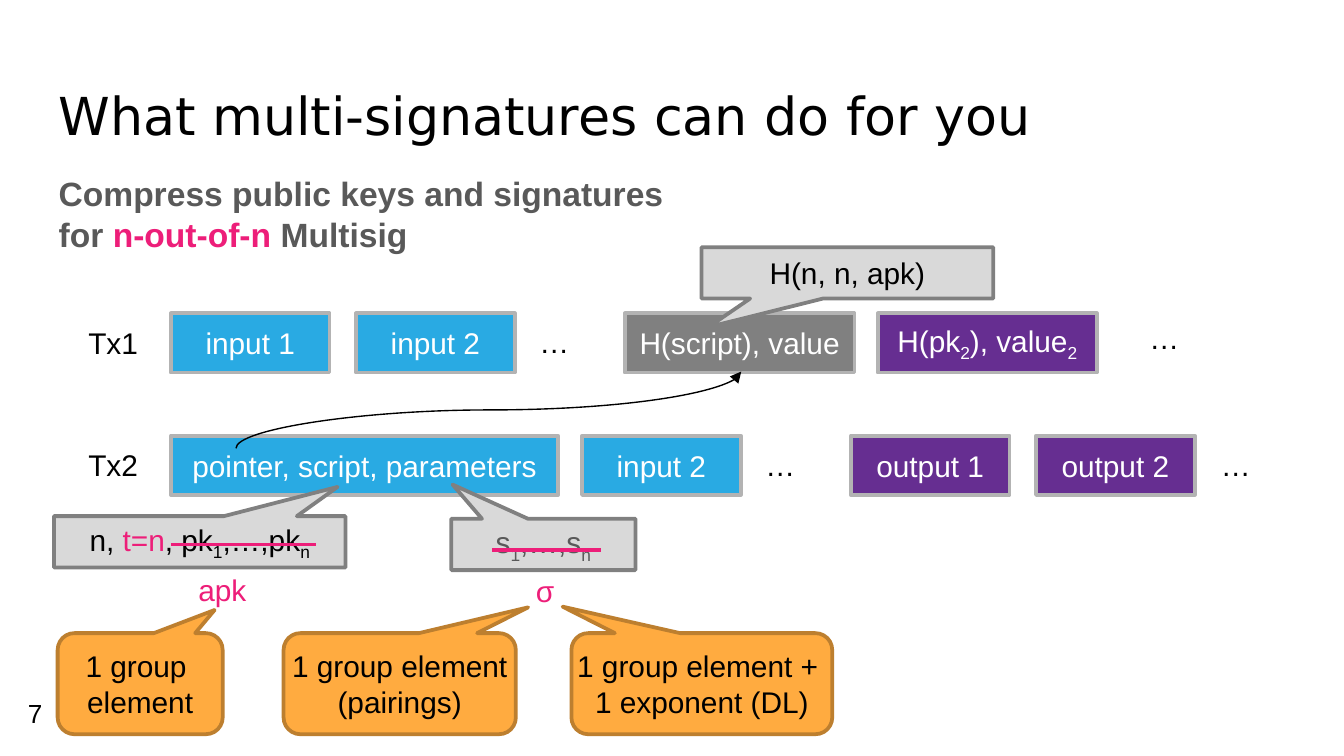
from lxml.etree import SubElement
from pptx import Presentation
from pptx.dml.color import RGBColor
from pptx.enum.shapes import MSO_CONNECTOR, MSO_SHAPE
from pptx.enum.text import MSO_ANCHOR, PP_ALIGN
from pptx.oxml.ns import qn
from pptx.util import Cm, Pt

BLACK, WHITE, DARK, PINK = "000000", "FFFFFF", "595959", "ED1E79"
BLUE, GREY, PURPLE = "29AAE3", "808080", "662E91"
BOX_H, SMALL_W, LABEL_W, LABEL_H = 1.12, 3.0, 1.55, 0.94

# Text is a list of runs: "_x" is a subscript, "\n" a line break,
# and a (text, colour) pair overrides the colour of the paragraph.
TRANSACTIONS = [  # name, top, boxes (left, width, fill, runs), ellipses (left, top)
    ("Tx1", 5.92,
     [(3.23, SMALL_W, BLUE, ["input 1"]),
      (6.73, SMALL_W, BLUE, ["input 2"]),
      (11.81, 4.34, GREY, ["H(script), value"]),
      (16.59, 4.14, PURPLE, ["H(pk", "_2", "), value", "_2"])],
     [(9.7, 5.99), (21.23, 5.92)]),
    ("Tx2", 8.23,
     [(3.23, 7.32, BLUE, ["pointer, script, parameters"]),
      (11.0, SMALL_W, BLUE, ["input 2"]),
      (16.08, SMALL_W, PURPLE, ["output 1"]),
      (19.58, SMALL_W, PURPLE, ["output 2"])],
     [(13.97, 8.31), (22.58, 8.31)]),
]
SCRIPT_CALLOUTS = [  # left, top, width, pointer tip, text colour, runs
    (13.26, 4.67, 5.51, (-0.476, 1.055), BLACK, ["H(n, n, apk)"]),
    (1.02, 9.75, 5.51, (0.473, -1.07), BLACK,
     ["n, ", ("t=n", PINK), ", pk", "_1", ",…,pk", "_n"]),
    (8.53, 9.8, 3.48, (-0.493, -1.166), DARK, ["s", "_1", ",…,s", "_n"]),
]
SIZE_CALLOUTS = [  # left, width, pointer tip, runs
    (1.09, 3.12, (0.451, -0.729), ["1 group ", "\n", "element"]),
    (5.36, 4.39, (0.553, -0.755), ["1 group element (pairings)"]),
    (10.8, 4.93, (-0.534, -0.762), ["1 group element + ", "\n", "1 exponent (DL)"]),
]
STRIKES = [(3.23, 5.97, 10.29), (9.3, 11.35, 10.39)]  # left, right, y
REPLACEMENTS = [(3.5, 10.67, 1.42, "apk"), (9.88, 10.69, 0.86, "σ")]

prs = Presentation()
prs.slide_width, prs.slide_height = Cm(25.4), Cm(14.28)
slide = prs.slides.add_slide(prs.slide_layouts[6])


def rgb(color):
    return RGBColor.from_string(color)


def write(s, runs, color, size=16, align=PP_ALIGN.CENTER, font="Arial", bold=False):
    tf = s.text_frame
    p = tf.paragraphs[0]
    p.alignment = align
    p.font.name, p.font.size, p.font.bold = font, Pt(size), bold
    p.font.color.rgb = rgb(color)
    for run in runs:
        if run == "\n":
            p.add_line_break()
            continue
        text, run_color = run if isinstance(run, tuple) else (run, None)
        r = p.add_run()
        r.text = text.lstrip("_")
        if run_color:
            r.font.color.rgb = rgb(run_color)
        if text.startswith("_"):
            r._r.get_or_add_rPr().set("baseline", "-25000")
    return tf


def text_box(left, top, width, height, runs, color=BLACK, wrap=True,
             align=PP_ALIGN.LEFT, **style):
    s = slide.shapes.add_textbox(Cm(left), Cm(top), Cm(width), Cm(height))
    s.text_frame.word_wrap = wrap
    return write(s, runs, color, align=align, **style)


def box(kind, left, top, width, height, fill, line, runs, color, tip=()):
    s = slide.shapes.add_shape(kind, Cm(left), Cm(top), Cm(width), Cm(height))
    s.shadow.inherit = False
    s.fill.solid()
    s.fill.fore_color.rgb = rgb(fill)
    s.line.color.rgb = rgb(line)
    s.line.width = Pt(2)
    for i, value in enumerate(tip):
        s.adjustments[i] = value
    tf = write(s, runs, color)
    tf.word_wrap, tf.vertical_anchor = True, MSO_ANCHOR.MIDDLE
    return tf


def connect(kind, x1, y1, x2, y2, color, width):
    c = slide.shapes.add_connector(kind, Cm(x1), Cm(y1), Cm(x2), Cm(y2))
    c.line.color.rgb = rgb(color)
    c.line.width = Pt(width)
    SubElement(c._element.spPr, qn("a:effectLst"))
    return c


title = text_box(0.86, 1.24, 23.67, 1.6, ["What multi-signatures can do for you"],
                 size=28, font="DejaVu Sans")
title.margin_top = Cm(0.33)
text_box(0.86, 3.15, 11.99, 1.8,
         ["Compress public keys and signatures for ", ("n-out-of-n ", PINK), "Multisig"],
         DARK, size=18, bold=True)

for name, top, boxes, ellipses in TRANSACTIONS:
    text_box(1.42, top + 0.08, LABEL_W, LABEL_H, [name])
    for left, width, fill, runs in boxes:
        box(MSO_SHAPE.RECTANGLE, left, top, width, BOX_H, fill, "B3B3B3", runs, WHITE)
    for left, y in ellipses:
        text_box(left, y, LABEL_W, LABEL_H, ["…"], align=PP_ALIGN.CENTER)

# The curve is laid out upright, then turned a quarter to run from Tx2 up to Tx1.
curve = connect(MSO_CONNECTOR.CURVE, 9.96, 12.52, 8.51, 2.97, BLACK, 0.75)
curve._element.spPr.find(qn("a:xfrm")).set("rot", "5400000")
SubElement(curve.line._get_or_add_ln(), qn("a:tailEnd"), type="triangle")

for left, top, width, tip, color, runs in SCRIPT_CALLOUTS:
    box(MSO_SHAPE.RECTANGULAR_CALLOUT, left, top, width, 0.97, "D9D9D9", GREY,
        runs, color, tip)
for left, right, y in STRIKES:
    connect(MSO_CONNECTOR.STRAIGHT, left, y, right, y, PINK, 1.75)
for left, top, width, text in REPLACEMENTS:
    text_box(left, top, width, LABEL_H, [text], PINK, wrap=False)
for left, width, tip, runs in SIZE_CALLOUTS:
    tf = box(MSO_SHAPE.ROUNDED_RECTANGULAR_CALLOUT, left, 11.96, width, 1.91,
             "FFAB40", "BD7F2F", runs, BLACK, tip)
    tf.margin_left = tf.margin_right = tf.margin_top = tf.margin_bottom = 0

number = text_box(0.28, 12.93, 1.52, 1.09, ["7"], size=14)
number.vertical_anchor = MSO_ANCHOR.MIDDLE

prs.save("out.pptx")
